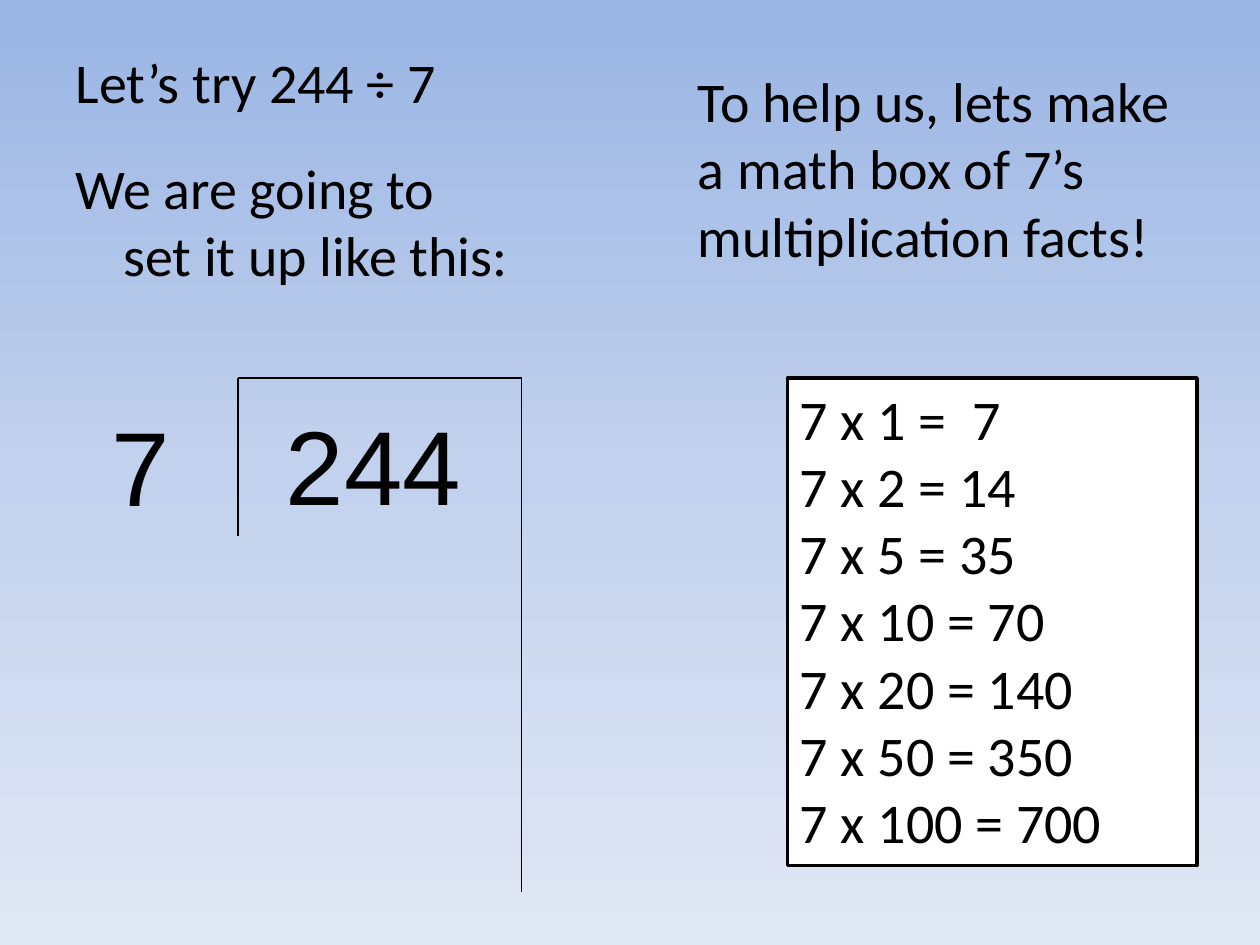
from copy import deepcopy
from dataclasses import dataclass

from pptx import Presentation
from pptx.dml.color import RGBColor
from pptx.enum import shapes, text
from pptx.oxml import ns, xmlchemy
from pptx.util import Inches, Pt


@dataclass(frozen=True)
class Theme:
    ink: RGBColor = RGBColor(0, 0, 0)
    paper: RGBColor = RGBColor(255, 255, 255)
    sky: tuple = ((0, "9AB5E4"), (0.5, "C2D1ED"), (1, "E1E8F5"))
    body_font: str = "Calibri"
    digit_font: str = "Arial"
    body_size: int = 32
    digit_size: int = 60
    rule: float = 0.75
    frame: float = 2


@dataclass(frozen=True)
class Box:
    left: float
    top: float
    width: float
    height: float

    def emu(self) -> tuple:
        return tuple(Inches(v) for v in (self.left, self.top, self.width, self.height))


@dataclass(frozen=True)
class Rule:
    start: tuple
    end: tuple


THEME = Theme()
HANG = 0.38
FACTORS = (1, 2, 5, 10, 20, 50, 100)

BRACKET_LEFT, BRACKET_TOP, BRACKET_RIGHT = 1.89, 3, 4.14
BRACKET = (
    Rule((BRACKET_LEFT, 4.25), (BRACKET_LEFT, BRACKET_TOP)),
    Rule((BRACKET_LEFT, BRACKET_TOP), (BRACKET_RIGHT, BRACKET_TOP)),
    Rule((BRACKET_RIGHT, BRACKET_TOP), (BRACKET_RIGHT, 7.08)),
)


def paint_background(s) -> None:
    """Fill the slide with the sky gradient, running from top to bottom."""
    fill = s.background.fill
    fill.gradient()
    fill.gradient_angle = 270
    first = fill.gradient_stops[0]._gs
    first.addnext(deepcopy(first))
    for stop, (position, color) in zip(fill.gradient_stops, THEME.sky):
        stop.position = position
        stop.color.rgb = RGBColor.from_string(color)


def write(sp, lines, *, font=THEME.body_font, size=THEME.body_size, hanging=False) -> None:
    """Fill a shape with left-aligned lines, optionally with a hanging indent."""
    tf = sp.text_frame
    tf.word_wrap = True
    tf.vertical_anchor = text.MSO_ANCHOR.TOP
    for i, line in enumerate(lines):
        p = tf.add_paragraph() if i else tf.paragraphs[0]
        p.alignment = text.PP_ALIGN.LEFT
        if hanging:
            p.space_before = Pt(size * 0.2)
            pPr = p._p.get_or_add_pPr()
            pPr.set("marL", str(Inches(HANG)))
            pPr.set("indent", str(-Inches(HANG)))
            pPr.append(xmlchemy.OxmlElement("a:buNone"))
        r = p.add_run()
        r.text = line
        r.font.name, r.font.size = font, Pt(size)
        r.font.color.rgb = THEME.ink


def add_text(parent, box: Box, *lines: str, **style) -> None:
    write(parent.shapes.add_textbox(*box.emu()), lines, **style)


def add_rule(parent, rule: Rule) -> None:
    ends = [Inches(v) for v in (*rule.start, *rule.end)]
    line = parent.shapes.add_connector(shapes.MSO_CONNECTOR.STRAIGHT, *ends)
    line.line.color.rgb = THEME.ink
    line.line.width = Pt(THEME.rule)
    line._element.find(ns.qn("p:spPr")).append(xmlchemy.OxmlElement("a:effectLst"))


def add_division(s) -> None:
    group = s.shapes.add_group_shape()
    for rule in BRACKET:
        add_rule(group, rule)
    digits = dict(font=THEME.digit_font, size=THEME.digit_size)
    add_text(group, Box(2.17, 3.13, 2.33, 1.11), "244", **digits)
    add_text(group, Box(0.79, 3.14, 0.92, 1.11), "7", **digits)


def add_math_box(s, box: Box) -> None:
    sp = s.shapes.add_shape(shapes.MSO_SHAPE.RECTANGLE, *box.emu())
    sp.shadow.inherit = False
    sp.fill.solid()
    sp.fill.fore_color.rgb = THEME.paper
    sp.line.color.rgb = THEME.ink
    sp.line.width = Pt(THEME.frame)
    write(sp, [f"7 x {n} = {7 * n:2}" for n in FACTORS])


def main() -> None:
    prs = Presentation()
    prs.slide_width, prs.slide_height = Inches(10), Inches(7.5)
    s = prs.slides.add_slide(prs.slide_layouts[1])
    paint_background(s)

    title = s.shapes.title._element
    title.getparent().remove(title)
    body = s.placeholders[1]
    body.left, body.top, body.width, body.height = Box(0.5, 0.33, 3.67, 1).emu()
    write(body, ["Let’s try 244 ÷ 7"], hanging=True)

    add_text(s, Box(0.5, 1.17, 3.67, 1.42), "We are going to set it up like this:", hanging=True)
    add_division(s)
    add_text(s, Box(5.44, 0.48, 4.06, 1.72),
             "To help us, lets make a math box of 7’s multiplication facts!")
    add_math_box(s, Box(6.25, 3, 3.25, 3.87))
    prs.save("out.pptx")


if __name__ == "__main__":
    main()
